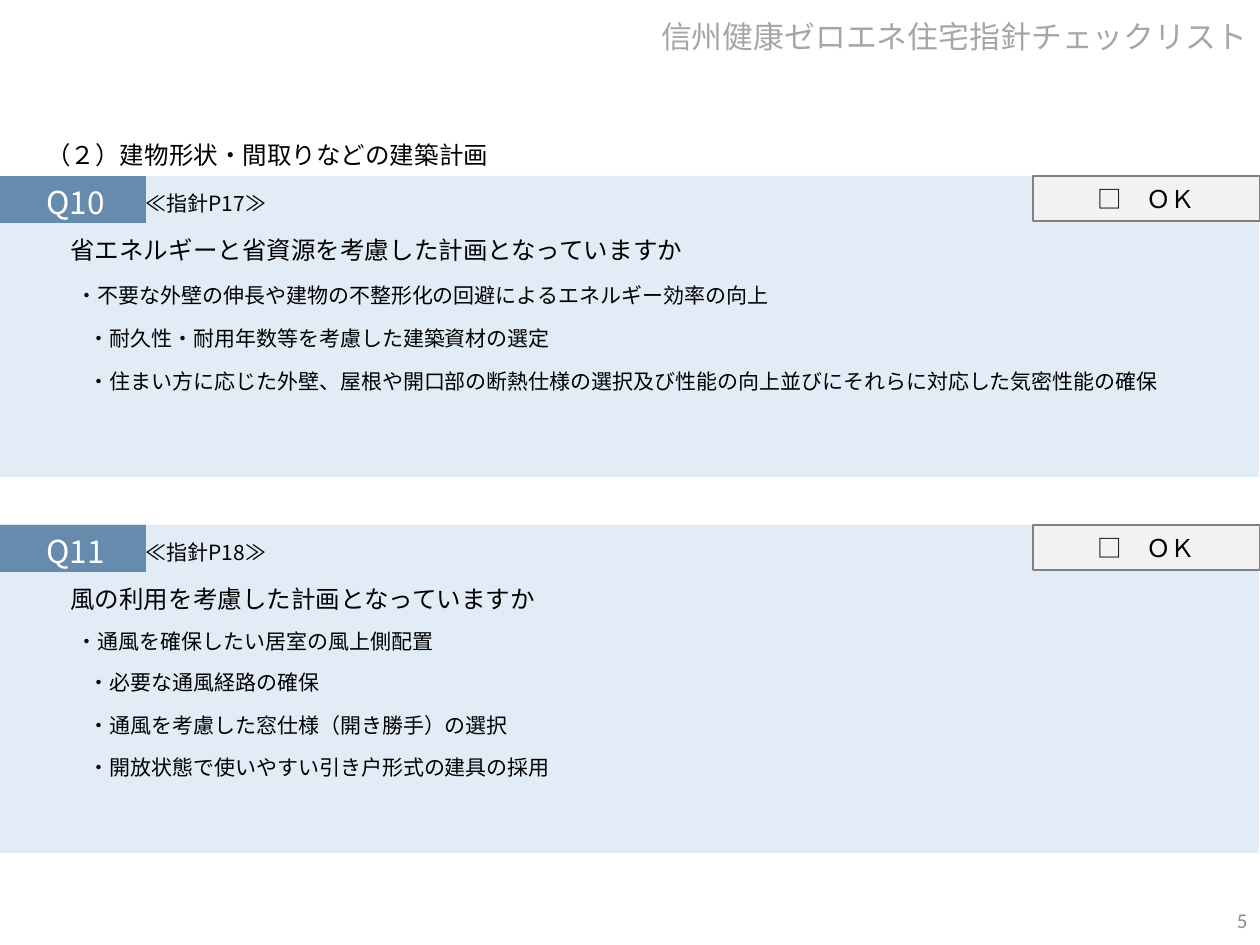
from pptx import Presentation
from pptx.dml.color import RGBColor
from pptx.enum.shapes import MSO_SHAPE
from pptx.enum.text import MSO_ANCHOR, PP_ALIGN
from pptx.oxml.ns import qn
from pptx.util import Pt
from lxml.etree import SubElement

PX = 914400 / 126
FONT = "Noto Sans CJK JP"


def add_rect(x, y, w, h, color):
    sp = s.shapes.add_shape(MSO_SHAPE.RECTANGLE, *(int(v * PX) for v in (x, y, w, h)))
    sp.shadow.inherit = False
    sp.fill.solid()
    sp.fill.fore_color.rgb = RGBColor.from_string(color)
    sp.line.fill.background()
    return sp


def add_text(box, lines, align=PP_ALIGN.LEFT, anchor=MSO_ANCHOR.TOP, font=FONT, sp=None):
    sp = sp or s.shapes.add_textbox(*(int(v * PX) for v in box))
    tf = sp.text_frame
    tf.word_wrap = True
    tf.vertical_anchor = anchor
    for i, (text, size, color, indent, spacing) in enumerate(lines):
        p = tf.add_paragraph() if i else tf.paragraphs[0]
        p.text = text
        p.alignment = align
        p.line_spacing = spacing
        if i:
            p.space_before = Pt(10)
        if indent:
            p._p.get_or_add_pPr().set("marL", str(int(indent * PX)))
        r = p.runs[0]
        r.font.name = font
        r.font.size = Pt(size)
        r.font.color.rgb = RGBColor.from_string(color)
        SubElement(r.font._element, qn("a:ea")).set("typeface", font)


prs = Presentation()
prs.slide_width = int(1260 * PX)
prs.slide_height = int(945 * PX)
s = prs.slides.add_slide(prs.slide_layouts[6])

add_text((0, 0, 1260, 77), [("信州健康ゼロエネ住宅指針チェックリスト", 17.6, "A6A6A6", 0, 0.9)],
         PP_ALIGN.RIGHT, MSO_ANCHOR.MIDDLE)
add_text((34, 134, 669, 43), [("（２）建物形状・間取りなどの建築計画", 14, "000000", 0, 1.0)])

questions = [
    (176, 301, "Q10", "≪指針P17≫", "省エネルギーと省資源を考慮した計画となっていますか", [
        ("・不要な外壁の伸長や建物の不整形化の回避によるエネルギー効率の向上", 1.0),
        ("・耐久性・耐用年数等を考慮した建築資材の選定", 1.0),
        ("・住まい方に応じた外壁、屋根や開口部の断熱仕様の選択及び性能の向上並びにそれらに対応した気密性能の確保", 1.0),
    ]),
    (525, 328, "Q11", "≪指針P18≫", "風の利用を考慮した計画となっていますか", [
        ("・通風を確保したい居室の風上側配置", 0.9),
        ("・必要な通風経路の確保", 0.9),
        ("・通風を考慮した窓仕様（開き勝手）の選択", 1.0),
        ("・開放状態で使いやすい引き戸形式の建具の採用", 1.0),
    ]),
]

for top, height, number, page, question, points in questions:
    add_rect(0, top, 146, 47, "1F4E79")
    panel = add_rect(-1, top, 1260, height, "BDD7EE")
    color = panel.fill._xPr.find(qn("a:solidFill"))[0]
    SubElement(color, qn("a:alpha")).set("val", "45000")

    lines = [(number, 18, "FFFFFF", 0, 0.9), (question, 14, "000000", 24, 0.9)]
    for i, (text, spacing) in enumerate(points):
        lines.append((text, 12, "000000", 42 if i else 30, spacing))
    add_text((34, top + 5, 1188, height - 6), lines)

    check = add_rect(1033, top, 227, 45, "F2F2F2")
    check.line.color.rgb = RGBColor.from_string("808080")
    check.line.width = Pt(0.75)
    add_text(None, [("□　ＯＫ", 14, "000000", 0, 1.0)], PP_ALIGN.CENTER, MSO_ANCHOR.MIDDLE, sp=check)

    add_text((123, top + 8, 166, 38), [(page, 12, "000000", 0, 1.0)], PP_ALIGN.CENTER)

add_text((977, 895, 283, 50), [("5", 12, "8C8C8C", 0, 1.0)],
         PP_ALIGN.RIGHT, MSO_ANCHOR.MIDDLE, "Calibri")

prs.save("out.pptx")
